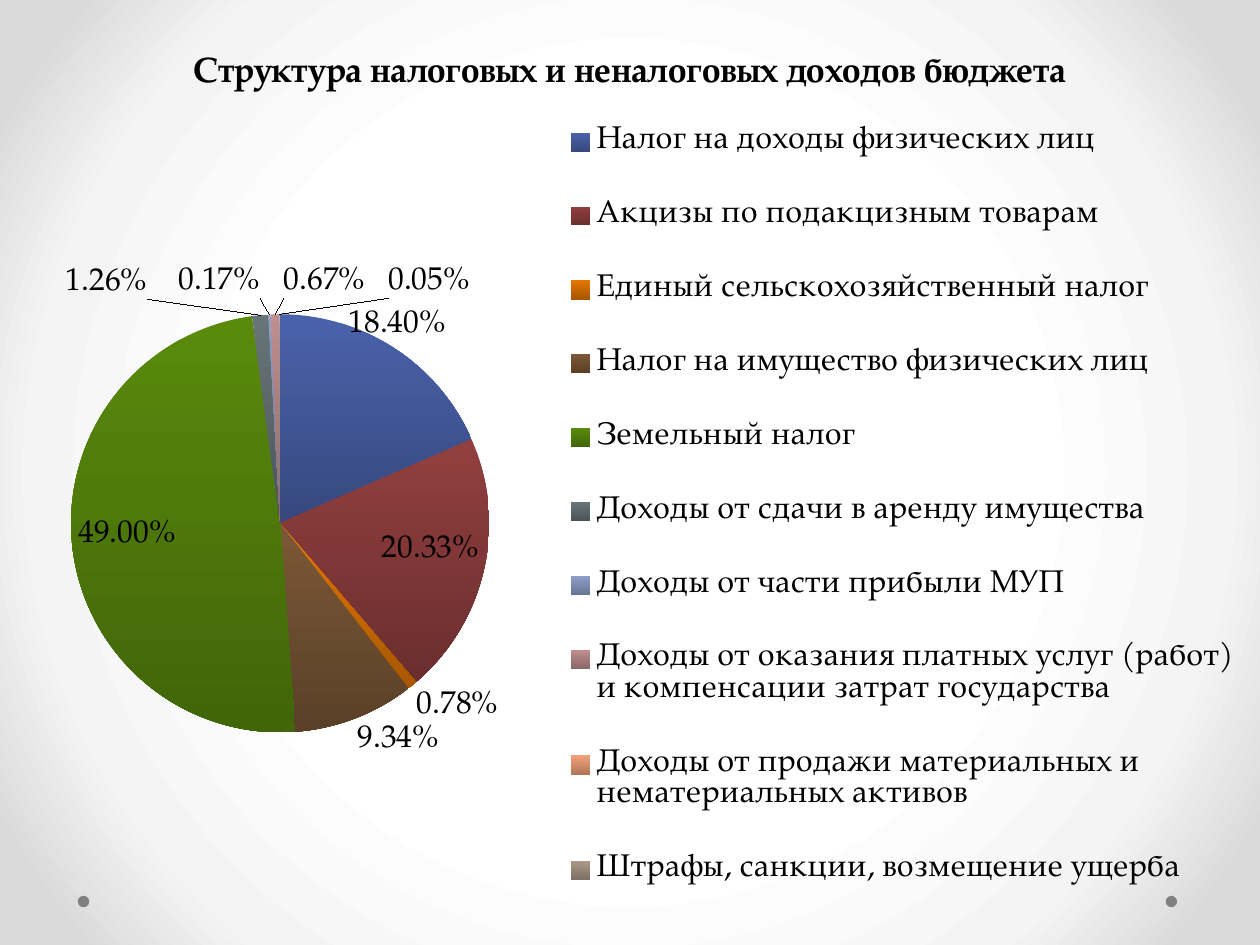
"""Build the slide on the structure of tax and non-tax budget revenue."""
from dataclasses import dataclass

from pptx import Presentation
from pptx.chart.data import CategoryChartData
from pptx.dml.color import RGBColor
from pptx.enum.chart import XL_CHART_TYPE, XL_LABEL_POSITION, XL_LEGEND_POSITION
from pptx.enum.shapes import MSO_SHAPE
from pptx.enum.text import MSO_ANCHOR, PP_ALIGN
from pptx.oxml import parse_xml
from pptx.oxml.ns import nsdecls
from pptx.util import Cm, Pt


@dataclass(frozen=True)
class Theme:
    """Hold the colours and type sizes of the slide."""
    font: str = "TeX Gyre Pagella"
    text: str = "000000"
    dot: str = "808080"
    title_size: int = 20
    title_leading: int = 58
    chart_size: int = 18
    slice_shade: float = 0.73
    backdrop: tuple = ((50, "FFFFFF"), (76, "F4F4F4"), (92, "DADADA"))


THEME = Theme()

TITLE = "Структура налоговых и неналоговых доходов бюджета"

REVENUES = (
    ("Налог на доходы физических лиц", 18.4, "4A62AB"),
    ("Акцизы по подакцизным товарам", 20.33, "923F3F"),
    ("Единый сельскохозяйственный налог", 0.78, "E57700"),
    ("Налог на имущество физических лиц", 9.34, "7B5836"),
    ("Земельный налог", 49, "598A0C"),
    ("Доходы от сдачи в аренду имущества", 1.26, "677579"),
    ("Доходы от части прибыли МУП", 0.17, "8F9FCB"),
    ("Доходы от оказания платных услуг (работ) и компенсации затрат государства",
     0.67, "C08E8E"),
    ("Доходы от продажи материальных и нематериальных активов", 0, "F4A27A"),
    ("Штрафы, санкции, возмещение ущерба", 0.05, "AB9A8A"),
)

LABEL_SHIFTS = {
    0: (-0.04, 0),
    5: (-0.09, -0.01),
    6: (-0.04, -0.01),
    7: (0.04, -0.01),
    9: (0.12, -0.01),
}


def paint_background(slide):
    """Fill the slide with a radial gradient."""
    slide.background.fill.solid()
    stops = "".join(
        f'<a:gs pos="{position * 1000}"><a:srgbClr val="{color}"/></a:gs>'
        for position, color in THEME.backdrop
    )
    gradient = parse_xml(
        f'<a:gradFill {nsdecls("a")} rotWithShape="1"><a:gsLst>{stops}</a:gsLst>'
        '<a:path path="circle"><a:fillToRect l="50000" t="50000" r="50000" b="50000"/>'
        "</a:path></a:gradFill>"
    )
    solid = slide.element.xpath(".//p:bgPr/a:solidFill")[0]
    solid.getparent().replace(solid, gradient)


def add_dot(slide, left):
    """Add a small grey dot near the bottom edge."""
    dot = slide.shapes.add_shape(MSO_SHAPE.OVAL, left, Cm(18.06), Cm(0.23), Cm(0.23))
    dot.shadow.inherit = False
    dot.fill.solid()
    dot.fill.fore_color.rgb = RGBColor.from_string(THEME.dot)
    dot.line.fill.background()


def style_font(font, size, bold=False):
    """Apply the theme typeface and text colour."""
    font.name = THEME.font
    font.size = Pt(size)
    font.bold = bold
    font.color.rgb = RGBColor.from_string(THEME.text)


def add_title(slide):
    """Add the centred heading."""
    box = slide.shapes.add_textbox(Cm(1.27), Cm(0), Cm(22.86), Cm(1.93))
    frame = box.text_frame
    frame.word_wrap = True
    frame.vertical_anchor = MSO_ANCHOR.BOTTOM
    para = frame.paragraphs[0]
    para.text = TITLE
    para.alignment = PP_ALIGN.CENTER
    para.line_spacing = Pt(THEME.title_leading)
    style_font(para.font, THEME.title_size, bold=True)


def set_layout(element, place, left, top, width, height, target=""):
    """Position a chart part by fractions of the chart."""
    for layout in element.xpath("c:layout"):
        element.remove(layout)
    element.insert(place, parse_xml(
        f'<c:layout {nsdecls("c")}><c:manualLayout>{target}'
        '<c:xMode val="edge"/><c:yMode val="edge"/>'
        f'<c:x val="{left}"/><c:y val="{top}"/><c:w val="{width}"/><c:h val="{height}"/>'
        "</c:manualLayout></c:layout>"
    ))


def shade_slice(point, color):
    """Fill a slice from its colour down to a darker shade."""
    top = RGBColor.from_string(color)
    bottom = RGBColor(*(round(channel * THEME.slice_shade) for channel in top))
    fill = point.format.fill
    fill.gradient()
    fill.gradient_angle = 270
    for stop, shade in zip(fill.gradient_stops, (top, bottom)):
        stop.color.rgb = shade
    point.format.line.fill.background()


def label_body(index):
    """Return the settings of one slice label, hidden when its value is zero."""
    if REVENUES[index][1] == 0:
        return '<c:delete val="1"/>'
    across, down = LABEL_SHIFTS[index]
    shown = "".join(
        f'<c:show{name} val="{int(name == "Percent")}"/>'
        for name in ("LegendKey", "Val", "CatName", "SerName", "Percent", "BubbleSize")
    )
    return (
        f'<c:layout><c:manualLayout><c:x val="{across}"/><c:y val="{down}"/>'
        '</c:manualLayout></c:layout><c:numFmt formatCode="0.00%" sourceLinked="0"/>'
        f'<c:dLblPos val="outEnd"/>{shown}'
    )


def label_slices(chart, series):
    """Show percentages and spread the labels of the crowded slices."""
    labels = series.data_labels
    labels.show_percentage = True
    labels.show_value = False
    labels.number_format = "0.00%"
    labels.number_format_is_linked = False
    labels.position = XL_LABEL_POSITION.BEST_FIT
    holder = chart.element.xpath(".//c:ser/c:dLbls")[0]
    special = [index for index, (_, value, _) in enumerate(REVENUES)
               if index in LABEL_SHIFTS or value == 0]
    for place, index in enumerate(special):
        holder.insert(place, parse_xml(
            f'<c:dLbl {nsdecls("c")}><c:idx val="{index}"/>{label_body(index)}</c:dLbl>'
        ))


def add_revenue_chart(slide):
    """Add the pie of revenue sources with its legend."""
    names, values, colors = zip(*REVENUES)
    data = CategoryChartData()
    data.categories = names
    data.add_series("Series 1", values)
    chart = slide.shapes.add_chart(
        XL_CHART_TYPE.PIE, Cm(0), Cm(1.52), Cm(25.1), Cm(17.2), data
    ).chart
    chart.has_title = False
    style_font(chart.font, THEME.chart_size)
    chart.has_legend = True
    chart.legend.position = XL_LEGEND_POSITION.RIGHT
    chart.legend.include_in_layout = False

    plot = chart.plots[0]
    plot.vary_by_categories = True
    series = plot.series[0]
    for index, color in enumerate(colors):
        shade_slice(series.points[index], color)
    label_slices(chart, series)

    area = chart.element.xpath(".//c:plotArea")[0]
    set_layout(area, 0, 0, 0.28, 0.45, 0.49, '<c:layoutTarget val="inner"/>')
    legend = chart.element.xpath(".//c:legend")[0]
    set_layout(legend, 1, 0.45, 0.01, 0.55, 0.99)


def main():
    """Build and save the deck."""
    deck = Presentation()
    deck.slide_width, deck.slide_height = Cm(25.4), Cm(19.05)
    page = deck.slides.add_slide(deck.slide_layouts[6])
    paint_background(page)
    for left in (Cm(23.5), Cm(1.57)):
        add_dot(page, left)
    add_title(page)
    add_revenue_chart(page)
    deck.save("out.pptx")


if __name__ == "__main__":
    main()
